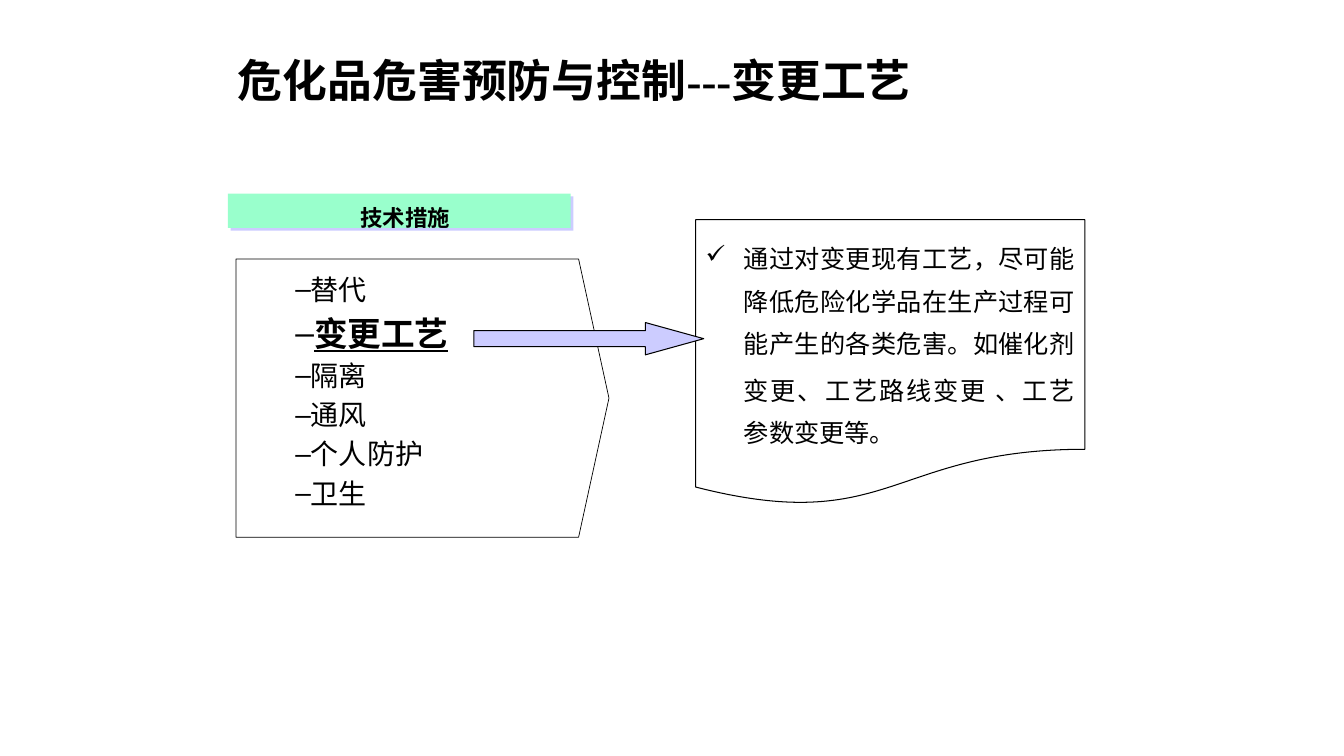
from lxml import etree
from pptx import Presentation
from pptx import util as u
from pptx.dml.color import RGBColor
from pptx.enum import shapes, text
from pptx.oxml.ns import qn

BLACK = RGBColor(0x00, 0x00, 0x00)
WHITE = RGBColor(0xFF, 0xFF, 0xFF)
MINT = RGBColor(0x99, 0xFF, 0xCC)
LAVENDER = RGBColor(0xCC, 0xCC, 0xFF)

SERIF = "Times New Roman"
SANS = "Arial"

MEASURES = ["替代", "变更工艺", "隔离", "通风", "个人防护", "卫生"]
CURRENT_MEASURE = "变更工艺"


class SlideBuilder:
    def __init__(self, slide):
        self.slide = slide

    def place(self, shape, box):
        shape.left, shape.top, shape.width, shape.height = map(u.Inches, box)
        shape.element.getparent().append(shape.element)

    def frame(self, shape, margins=(0.1, 0.05), anchor=text.MSO_ANCHOR.TOP):
        frame = shape.text_frame
        frame.word_wrap = True
        frame.auto_size = text.MSO_AUTO_SIZE.SHAPE_TO_FIT_TEXT
        frame.vertical_anchor = anchor
        frame.margin_left = frame.margin_right = u.Inches(margins[0])
        frame.margin_top = frame.margin_bottom = u.Inches(margins[1])
        return frame

    def style(self, font, size, name=SERIF, bold=False, underline=False):
        font.name = name
        font.size = u.Pt(size)
        font.bold = bold
        font.underline = underline
        font.color.rgb = BLACK

    def layout(self, paragraph, left=0, first=0, bullet=None, align=text.PP_ALIGN.LEFT):
        paragraph.alignment = align
        paragraph.space_before = u.Pt(0)
        properties = paragraph._p.get_or_add_pPr()
        properties.set("marL", str(u.Inches(left)))
        properties.set("indent", str(u.Inches(first)))
        if bullet:
            etree.SubElement(properties, qn("a:buChar"), char=bullet)
        else:
            etree.SubElement(properties, qn("a:buNone"))

    def shape(self, kind, box, fill=None, line=None, adjustments=()):
        shape = self.slide.shapes.add_shape(kind, *map(u.Inches, box))
        shape.shadow.inherit = False
        for index, value in enumerate(adjustments):
            shape.adjustments[index] = value
        if fill is None:
            shape.fill.background()
        else:
            shape.fill.solid()
            shape.fill.fore_color.rgb = fill
        if line is None:
            shape.line.fill.background()
        else:
            shape.line.color.rgb = BLACK
            shape.line.width = u.Pt(line)
        return shape

    def shadow(self, shape, color, distance, degrees):
        effects = shape.element.spPr.find(qn("a:effectLst"))
        outer = etree.SubElement(
            effects, qn("a:outerShdw"),
            dist=str(u.Pt(distance)), dir=str(degrees * 60000), algn="ctr", rotWithShape="0")
        etree.SubElement(outer, qn("a:srgbClr"), val=str(color))

    def title(self, wording, box):
        shape = self.slide.shapes.title
        self.place(shape, box)
        paragraph = self.frame(shape).paragraphs[0]
        paragraph.text = wording
        self.layout(paragraph, 0.38, -0.38, align=text.PP_ALIGN.JUSTIFY)
        self.style(paragraph.font, 32, bold=True)

    def measures(self, items, current, box):
        shape = self.slide.placeholders[1]
        self.place(shape, box)
        frame = self.frame(shape, (0, 0))
        for index, item in enumerate(items):
            paragraph = frame.add_paragraph() if index else frame.paragraphs[0]
            paragraph.text = item
            paragraph.level = 1
            self.layout(paragraph, 0.21, 0.29, "–")
            chosen = item == current
            size = 24 if chosen else 20
            if index:
                paragraph.space_before = u.Pt(size * 0.2)
            self.style(paragraph.font, size, bold=chosen, underline=chosen)

    def heading(self, wording, box):
        shape = self.slide.shapes.add_textbox(*map(u.Inches, box))
        paragraph = self.frame(shape, (0, 0), text.MSO_ANCHOR.MIDDLE).paragraphs[0]
        paragraph.text = wording
        self.layout(paragraph, align=text.PP_ALIGN.CENTER)
        self.style(paragraph.font, 16, SANS, bold=True)

    def explanation(self, runs, box):
        shape = self.slide.shapes.add_textbox(*map(u.Inches, box))
        paragraph = self.frame(shape).paragraphs[0]
        self.layout(paragraph, 0.38, -0.38, "✓", text.PP_ALIGN.JUSTIFY)
        paragraph.line_spacing = 1.4
        for wording, size, bold in runs:
            run = paragraph.add_run()
            run.text = wording
            self.style(run.font, size, bold=bold)


def main():
    presentation = Presentation()
    presentation.slide_width = u.Inches(13.33)
    presentation.slide_height = u.Inches(7.5)
    builder = SlideBuilder(presentation.slides.add_slide(presentation.slide_layouts[1]))
    kinds = shapes.MSO_SHAPE

    builder.shape(kinds.PENTAGON, (2.34, 2.57, 3.7, 2.76), WHITE, 0.5, [0.109])
    builder.measures(MEASURES, CURRENT_MEASURE, (2.43, 2.7, 3.17, 2.44))
    banner = builder.shape(kinds.RECTANGLE, (2.26, 1.92, 3.4, 0.34), MINT)
    builder.shadow(banner, LAVENDER, 2.8, 45)
    builder.heading("技术措施", (2.57, 2.02, 2.9, 0.27))
    builder.shape(kinds.FLOWCHART_DOCUMENT, (6.9, 2.18, 3.86, 2.84), line=0.75)
    builder.shape(kinds.RIGHT_ARROW, (4.7, 3.2, 2.28, 0.32), LAVENDER, 0.75, [0.5, 1.806])
    builder.explanation([
        ("通过对变更现有工艺，尽可能降低危险化学品在生产过程可能产生的各类危害。如催化剂变更、工艺路线变更", 18, False),
        (" ", 20, True),
        ("、工艺参数变更等。", 18, False),
    ], (6.9, 2.25, 3.86, 2.27))
    builder.title("危化品危害预防与控制---变更工艺", (2.26, 0.47, 7.01, 0.64))

    presentation.save("out.pptx")


if __name__ == "__main__":
    main()
